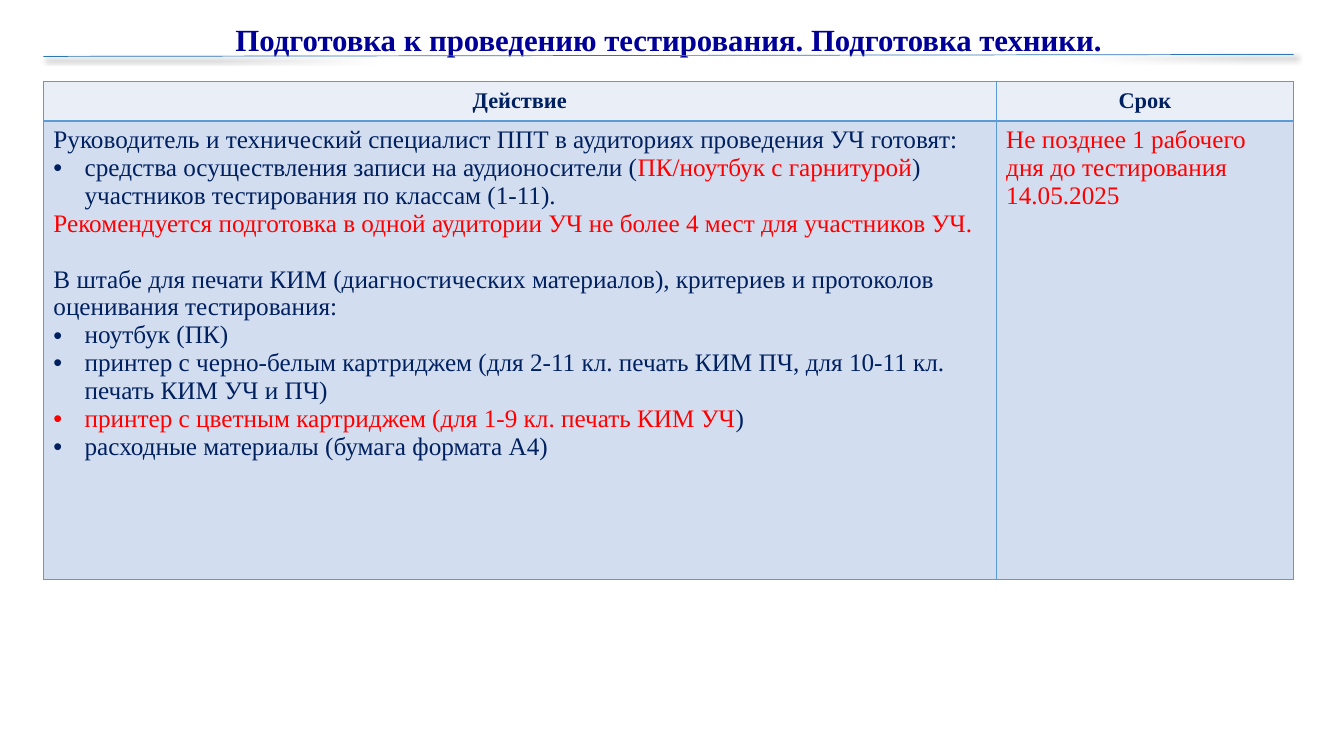
from dataclasses import dataclass

from lxml.etree import SubElement
from pptx import Presentation
from pptx.dml.color import RGBColor
from pptx.enum.text import MSO_ANCHOR, MSO_AUTO_SIZE, PP_ALIGN
from pptx.enum.shapes import MSO_CONNECTOR
from pptx.oxml.ns import qn
from pptx.util import Inches, Pt


@dataclass(frozen=True)
class Theme:
    font: str = "Times New Roman"
    title: str = "000099"
    ink: str = "002060"
    alert: str = "FF0000"
    header_fill: str = "EAEFF7"
    body_fill: str = "D2DEEF"
    border: str = "5B9BD5"
    rule: str = "2E75B6"
    shadow: str = "000000"
    title_size: int = 22
    header_size: int = 16
    body_size: int = 18


THEME = Theme()

# Slide grid, in inches
WIDTH, HEIGHT = 13.33, 7.5
MARGIN = 0.43
CONTENT = 12.4
COLUMNS = (9.45, 2.95)
ROWS = (0.39, 4.55)
TABLE_TOP = 0.81

# Content: each paragraph is (spans, options); a span is (text, colour)
TITLE = "Подготовка к проведению тестирования. Подготовка техники."
HEADERS = ("Действие", "Срок")
INK, ALERT = THEME.ink, THEME.alert
BULLET = {"bullet": True}
ACTIONS = [
    ([("Руководитель и технический специалист ППТ в аудиториях проведения УЧ готовят:", INK)], {}),
    ([("средства осуществления записи на аудионосители (", INK),
      ("ПК/ноутбук с гарнитурой", ALERT),
      (") участников тестирования по классам (1-11).", INK)], BULLET),
    ([("Рекомендуется подготовка в одной аудитории УЧ не более 4 мест для участников УЧ.", ALERT)], {}),
    ([("В штабе для печати КИМ (диагностических материалов), критериев и протоколов "
       "оценивания тестирования:", INK)], {"before": 20}),
    ([("ноутбук (ПК)", INK)], BULLET),
    ([("принтер с черно-белым картриджем (для 2-11 кл. печать КИМ ПЧ, для 10-11 кл. "
       "печать КИМ УЧ и ПЧ)", INK)], BULLET),
    ([("принтер с цветным картриджем (для 1-9 кл. печать КИМ УЧ", ALERT), (")", INK)], BULLET),
    ([("расходные материалы (бумага формата А4)", INK)], BULLET),
]
DEADLINE = [
    ([("Не позднее 1 рабочего дня до тестирования", ALERT)], {}),
    ([("14.05.2025", ALERT)], {}),
]


def write(para, text, *, size, color, bold=False):
    """Append formatted text to a paragraph."""
    span = para.add_run()
    span.text = text
    span.font.name = THEME.font
    span.font.size = Pt(size)
    span.font.bold = bold
    span.font.color.rgb = RGBColor.from_string(color)


def set_bullet(para, indent=0.31):
    properties = para._p.get_or_add_pPr()
    properties.set("marL", str(Inches(indent)))
    properties.set("indent", str(-Inches(indent)))
    SubElement(properties, qn("a:buFont"), typeface="Arial")
    SubElement(properties, qn("a:buChar"), char="•")


def write_paragraphs(frame, paragraphs):
    for index, (spans, options) in enumerate(paragraphs):
        para = frame.add_paragraph() if index else frame.paragraphs[0]
        para.alignment = PP_ALIGN.LEFT
        if "before" in options:
            para.space_before = Pt(options["before"])
        if options.get("bullet"):
            set_bullet(para)
        for text, color in spans:
            write(para, text, size=THEME.body_size, color=color)


def style_cell(cell, fill):
    """Draw all four borders, then the fill, in schema order."""
    properties = cell._tc.get_or_add_tcPr()
    for side in ("a:lnL", "a:lnR", "a:lnT", "a:lnB"):
        line = SubElement(properties, qn(side), w=str(Pt(1)))
        solid = SubElement(line, qn("a:solidFill"))
        SubElement(solid, qn("a:srgbClr"), val=THEME.border)
    cell.fill.solid()
    cell.fill.fore_color.rgb = RGBColor.from_string(fill)


def add_title(page):
    box = page.shapes.title
    box.left, box.top = Inches(MARGIN), 0
    box.width, box.height = Inches(CONTENT), Inches(0.63)
    frame = box.text_frame
    frame.word_wrap = True
    frame.auto_size = MSO_AUTO_SIZE.NONE
    frame.vertical_anchor = MSO_ANCHOR.BOTTOM
    para = frame.paragraphs[0]
    para.alignment = PP_ALIGN.CENTER
    para.line_spacing = 0.9
    write(para, TITLE, size=THEME.title_size, color=THEME.title, bold=True)


def add_plan_table(page):
    table = page.shapes.add_table(
        len(ROWS), len(COLUMNS), Inches(MARGIN), Inches(TABLE_TOP),
        Inches(CONTENT), Inches(sum(ROWS))).table
    for column, width in zip(table.columns, COLUMNS):
        column.width = Inches(width)
    for row, height in zip(table.rows, ROWS):
        row.height = Inches(height)

    for index, (header, paragraphs) in enumerate(zip(HEADERS, (ACTIONS, DEADLINE))):
        # Header cell
        cell = table.cell(0, index)
        style_cell(cell, THEME.header_fill)
        cell.vertical_anchor = MSO_ANCHOR.MIDDLE
        para = cell.text_frame.paragraphs[0]
        para.alignment = PP_ALIGN.CENTER
        write(para, header, size=THEME.header_size, color=THEME.ink, bold=True)
        # Body cell
        cell = table.cell(1, index)
        style_cell(cell, THEME.body_fill)
        write_paragraphs(cell.text_frame, paragraphs)


def add_title_rule(page):
    rule = page.shapes.add_connector(
        MSO_CONNECTOR.STRAIGHT, Inches(MARGIN), Inches(0.56),
        Inches(MARGIN + CONTENT), Inches(0.54))
    rule.line.color.rgb = RGBColor.from_string(THEME.rule)
    rule.line.width = Pt(0.5)
    # Soft shadow, falling down and to the right
    effects = SubElement(rule._element.spPr, qn("a:effectLst"))
    shadow = SubElement(effects, qn("a:outerShdw"), blurRad=str(Pt(4)), dist=str(Pt(3)),
                        dir=str(45 * 60000), algn="tl", rotWithShape="0")
    color = SubElement(shadow, qn("a:srgbClr"), val=THEME.shadow)
    SubElement(color, qn("a:alpha"), val="40000")


def main():
    deck = Presentation()
    deck.slide_width, deck.slide_height = Inches(WIDTH), Inches(HEIGHT)
    page = deck.slides.add_slide(deck.slide_layouts.get_by_name("Title Only"))
    add_title(page)
    add_plan_table(page)
    add_title_rule(page)
    deck.save("out.pptx")


if __name__ == "__main__":
    main()
